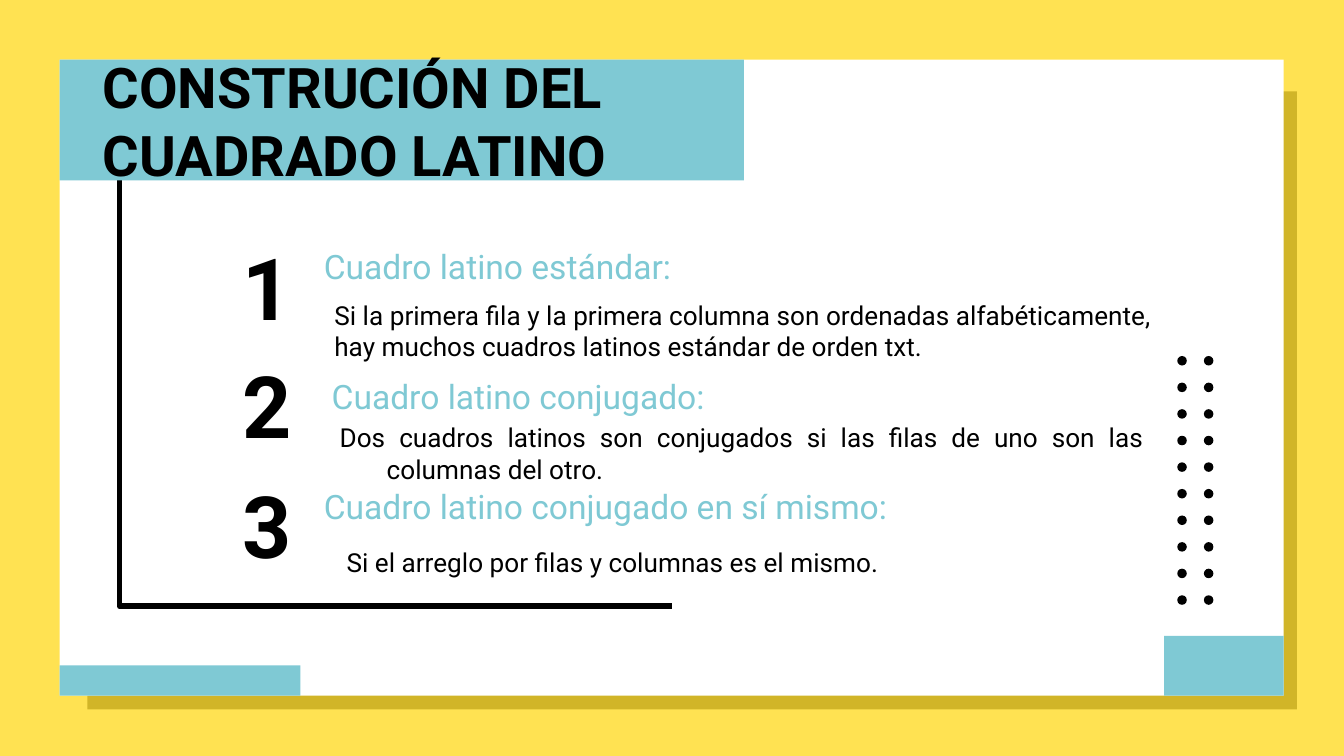
import pptx
import pptx.dml.color
import pptx.enum.shapes
import pptx.enum.text
import pptx.util

Cm = pptx.util.Cm
Pt = pptx.util.Pt
ALIGN = pptx.enum.text.PP_ALIGN
ANCHOR = pptx.enum.text.MSO_ANCHOR
SHAPE = pptx.enum.shapes.MSO_SHAPE

YELLOW = pptx.dml.color.RGBColor(0xFF, 0xE2, 0x52)
MUSTARD = pptx.dml.color.RGBColor(0xD1, 0xB5, 0x28)
TEAL = pptx.dml.color.RGBColor(0x7F, 0xC9, 0xD4)
WHITE = pptx.dml.color.RGBColor(0xFF, 0xFF, 0xFF)
BLACK = pptx.dml.color.RGBColor(0, 0, 0)


def add_filled(page, kind, left, top, width, height, color):
    shape = page.shapes.add_shape(kind, Cm(left), Cm(top), Cm(width), Cm(height))
    shape.shadow.inherit = False
    shape.fill.solid()
    shape.fill.fore_color.rgb = color
    shape.line.fill.background()
    return shape


def add_bracket(page, left, top, right, bottom):
    builder = page.shapes.build_freeform(Cm(right), Cm(top))
    corners = [(left, top), (left, bottom), (right, bottom)]
    builder.add_line_segments([(Cm(x), Cm(y)) for x, y in corners], close=False)
    bracket = builder.convert_to_shape()
    bracket.shadow.inherit = False
    bracket.fill.background()
    bracket.line.color.rgb = BLACK
    bracket.line.width = Pt(3)


def add_dots(page, left, top, columns=2, rows=10, pitch=0.5025, size=0.18):
    for column in range(columns):
        for row in range(rows):
            add_filled(page, SHAPE.OVAL, left + column * pitch,
                       top + row * pitch, size, size, BLACK)


def write(shape, lines, size, color, bold=False, align=ALIGN.LEFT,
          anchor=ANCHOR.TOP, hanging=False, inset_left=0.25):
    frame = shape.text_frame
    frame.word_wrap = True
    frame.vertical_anchor = anchor
    frame.margin_left = Cm(inset_left)
    frame.margin_top = frame.margin_right = frame.margin_bottom = Cm(0.25)
    frame.text = "\n".join(lines)
    for para in frame.paragraphs:
        para.alignment = align
        if hanging:
            properties = para._p.get_or_add_pPr()
            properties.set("marL", str(Cm(1.27)))
            properties.set("indent", str(Cm(-0.89)))
        for span in para.runs:
            span.font.name = "Roboto"
            span.font.size = Pt(size)
            span.font.bold = bold
            span.font.color.rgb = color


def add_text(page, left, top, width, height, lines, size, color, **style):
    box = page.shapes.add_textbox(Cm(left), Cm(top), Cm(width), Cm(height))
    write(box, lines, size, color, **style)


def add_number(page, top, number):
    add_text(page, 4.34, top, 1.32, 0.97, [number], 46, BLACK, bold=True,
             align=ALIGN.CENTER, anchor=ANCHOR.MIDDLE)


def add_heading(page, left, top, text):
    add_text(page, left, top, 12.09, 1.17, [text], 18, TEAL)


def add_body(page, left, top, width, height, lines, align):
    add_text(page, left, top, width, height, lines, 14, BLACK,
             align=align, hanging=True)


def main():
    deck = pptx.Presentation()
    deck.slide_width, deck.slide_height = Cm(25.4), Cm(14.29)
    page = deck.slides.add_slide(deck.slide_layouts[6])
    page.background.fill.solid()
    page.background.fill.fore_color.rgb = YELLOW

    add_filled(page, SHAPE.RECTANGLE, 1.65, 1.73, 22.86, 11.68, MUSTARD)
    add_filled(page, SHAPE.RECTANGLE, 1.13, 1.13, 23.13, 12.02, WHITE)
    add_bracket(page, 2.26, 2.18, 12.7, 11.46)
    add_filled(page, SHAPE.RECTANGLE, 1.13, 12.58, 4.55, 0.57, TEAL)
    add_filled(page, SHAPE.RECTANGLE, 22, 12.02, 2.26, 1.13, TEAL)

    title = add_filled(page, SHAPE.RECTANGLE, 1.13, 1.13, 12.93, 2.28, TEAL)
    write(title, ["CONSTRUCIÓN DEL CUADRADO LATINO"], 30, BLACK, bold=True,
          anchor=ANCHOR.MIDDLE, inset_left=0.81)

    add_number(page, 4.93, "1")
    add_heading(page, 5.87, 4.39, "Cuadro latino estándar:")
    add_body(page, 5.69, 5.41, 16.59, 1.57,
             ["Si la primera fila y la primera columna son ordenadas alfabéticamente,",
              "hay muchos cuadros latinos estándar de orden txt."], ALIGN.JUSTIFY)

    add_number(page, 7.16, "2")
    add_heading(page, 6.02, 6.86, "Cuadro latino conjugado:")
    add_body(page, 5.79, 7.72, 16.08, 1.3,
             ["Dos cuadros latinos son conjugados si las filas de uno son las "
              "columnas del otro."], ALIGN.JUSTIFY)

    add_number(page, 9.42, "3")
    add_heading(page, 5.87, 8.94, "Cuadro latino conjugado en sí mismo:")
    add_body(page, 5.92, 10.08, 16.03, 0.97,
             ["Si el arreglo por filas y columnas es el mismo."], ALIGN.LEFT)

    add_dots(page, 22.25, 6.73)
    deck.save("out.pptx")


if __name__ == "__main__":
    main()
